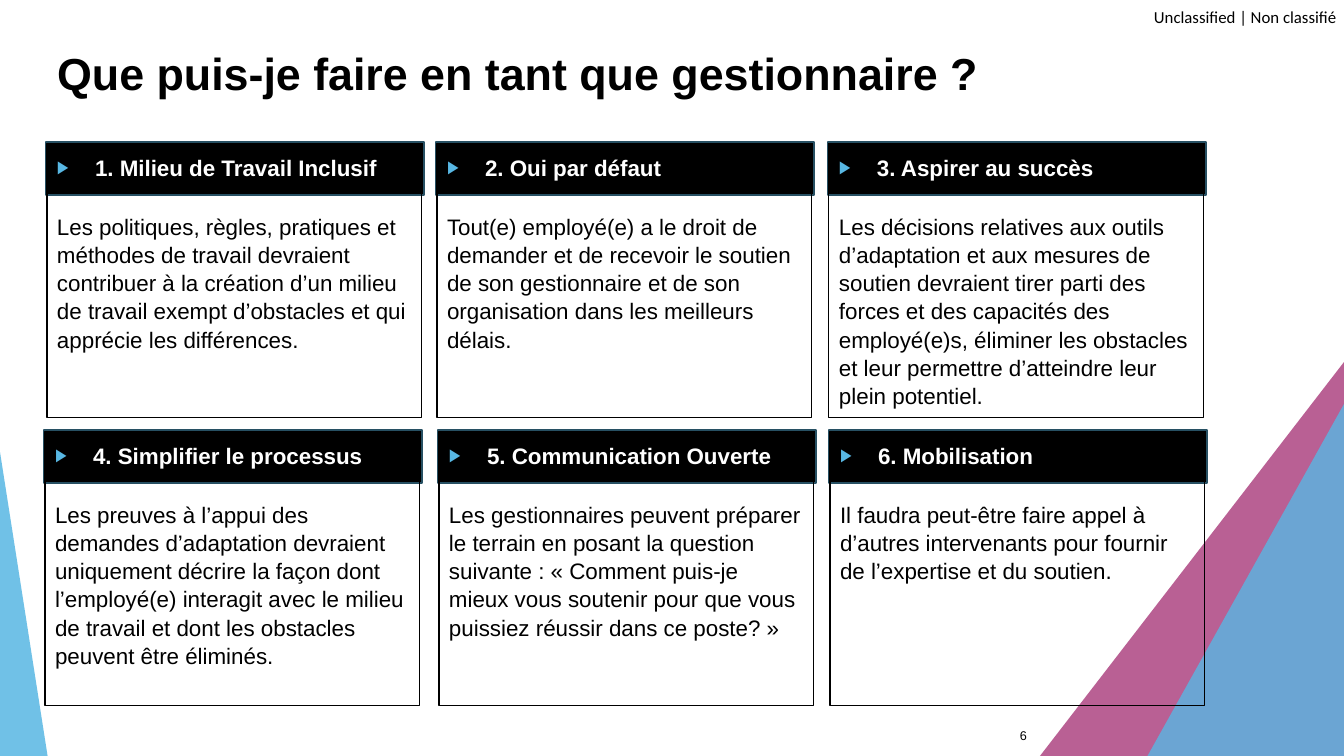
from dataclasses import dataclass

from lxml.etree import SubElement
from pptx import Presentation
from pptx.dml.color import RGBColor
from pptx.enum.shapes import MSO_SHAPE as Shape
from pptx.enum.text import MSO_ANCHOR as Anchor, MSO_AUTO_SIZE as AutoSize, PP_ALIGN as Align
from pptx.oxml.ns import qn
from pptx.util import Pt

TITLE = "Que puis-je faire en tant que gestionnaire ?"
CLASSIFICATION = "Unclassified | Non classifié"
PAGE = "6"

# heading, advice
PRINCIPLES = [
    ("1. Milieu de Travail Inclusif",
     "Les politiques, règles, pratiques et méthodes de travail devraient contribuer à la "
     "création d’un milieu de travail exempt d’obstacles et qui apprécie les différences."),
    ("2. Oui par défaut",
     "Tout(e) employé(e) a le droit de demander et de recevoir le soutien de son "
     "gestionnaire et de son organisation dans les meilleurs délais."),
    ("3. Aspirer au succès",
     "Les décisions relatives aux outils d’adaptation et aux mesures de soutien devraient "
     "tirer parti des forces et des capacités des employé(e)s, éliminer les obstacles et "
     "leur permettre d’atteindre leur plein potentiel."),
    ("4. Simplifier le processus",
     "Les preuves à l’appui des demandes d’adaptation devraient uniquement décrire la façon "
     "dont l’employé(e) interagit avec le milieu de travail et dont les obstacles peuvent "
     "être éliminés."),
    ("5. Communication Ouverte",
     "Les gestionnaires peuvent préparer le terrain en posant la question suivante : "
     "« Comment puis-je mieux vous soutenir pour que vous puissiez réussir dans ce poste? »"),
    ("6. Mobilisation",
     "Il faudra peut-être faire appel à d’autres intervenants pour fournir de l’expertise "
     "et du soutien."),
]


@dataclass(frozen=True)
class Theme:
    ink: str = "000000"
    paper: str = "FFFFFF"
    bar_edge: str = "275063"
    sky: str = "58B7E3"
    berry: str = "9E246B"
    font: str = "Arial"
    label_font: str = "Calibri"
    title: int = 32
    body: int = 16
    label: int = 12
    page: int = 9


THEME = Theme()

# Lengths in px, 1344 across the slide
SLIDE = (1344, 756)
TITLE_BOX = (47, 25, 1163, 96)
LABEL_BOX = (1154, 7, 187, 20)
PAGE_BOX = (962, 716, 75, 40)
CARD_SIZE = (375, 274)
BAR_SIZE = (378, 53)
# card left edges by column, then card top, one entry per row
ROWS = [((47, 437, 829), 144), ((45, 439, 830), 432)]
INSET = 10
BULLET_INDENT = 38

# box, position of the apex, colour, opacity in percent
TRIANGLES = [
    ((1033, 362, 311, 403), 1, THEME.berry, 72),
    ((1143, 404, 201, 360), 1, THEME.sky, 80),
    ((0, 452, 49, 313), 0, THEME.sky, 85),
]


def px(length):
    return round(length * 914400 / 100.8)


def emu(box):
    return [px(length) for length in box]


def rgb(colour):
    return RGBColor.from_string(colour)


def add_run(paragraph, words, size, colour=THEME.ink, bold=False, font=THEME.font):
    run = paragraph.add_run()
    run.text = words
    run.font.size, run.font.bold, run.font.name = Pt(size), bold, font
    run.font.color.rgb = rgb(colour)


def add_panel(slide, kind, box, fill=None, edge=None, edge_width=0.75):
    panel = slide.shapes.add_shape(kind, *emu(box))
    panel.shadow.inherit = False
    if fill:
        panel.fill.solid()
        panel.fill.fore_color.rgb = rgb(fill)
    else:
        panel.fill.background()
    if edge:
        panel.line.color.rgb = rgb(edge)
        panel.line.width = Pt(edge_width)
    else:
        panel.line.fill.background()
    return panel


def add_triangle(slide, box, apex, colour, opacity):
    triangle = add_panel(slide, Shape.ISOSCELES_TRIANGLE, box, fill=colour)
    triangle.adjustments[0] = apex
    swatch = triangle.fill._xPr.find(qn("a:solidFill"))[0]
    SubElement(swatch, qn("a:alpha"), val=str(opacity * 1000))


def add_arrow_bullet(paragraph):
    props = paragraph._p.get_or_add_pPr()
    props.set("marL", str(px(BULLET_INDENT)))
    props.set("indent", str(-px(BULLET_INDENT)))
    colour = SubElement(props, qn("a:buClr"))
    SubElement(colour, qn("a:srgbClr"), val=THEME.sky)
    SubElement(props, qn("a:buSzPct"), val="80000")
    SubElement(props, qn("a:buFont"), typeface=THEME.font)
    SubElement(props, qn("a:buChar"), char="▶")


def add_card(slide, left, top, heading, advice):
    card = add_panel(slide, Shape.RECTANGLE, (left, top, *CARD_SIZE), edge=THEME.ink)
    frame = card.text_frame
    frame.word_wrap = True
    frame.vertical_anchor = Anchor.TOP
    frame.margin_left = frame.margin_right = frame.margin_top = px(INSET)
    frame.margin_bottom = px(INSET / 2)

    head = frame.paragraphs[0]
    head.alignment = Align.LEFT
    head.space_before = head.space_after = Pt(12)
    add_arrow_bullet(head)
    add_run(head, heading, THEME.body, THEME.paper, bold=True)

    body = frame.add_paragraph()
    body.alignment = Align.LEFT
    body.space_before = Pt(10)
    body.line_spacing = 1.05
    add_run(body, advice, THEME.body)


def add_label(slide, box, words, size, font, inset, align):
    label = slide.shapes.add_textbox(*emu(box))
    frame = label.text_frame
    frame.word_wrap = False
    frame.vertical_anchor = Anchor.MIDDLE
    frame.margin_left = frame.margin_right = px(inset)
    frame.margin_top = frame.margin_bottom = 0
    frame.paragraphs[0].alignment = align
    add_run(frame.paragraphs[0], words, size, font=font)


def place_title(slide):
    title = slide.shapes.title
    title.left, title.top, title.width, title.height = emu(TITLE_BOX)
    frame = title.text_frame
    frame.word_wrap = True
    frame.auto_size = AutoSize.NONE
    frame.vertical_anchor = Anchor.MIDDLE
    frame.paragraphs[0].alignment = Align.LEFT
    add_run(frame.paragraphs[0], TITLE, THEME.title, bold=True)


def main():
    deck = Presentation()
    deck.slide_width, deck.slide_height = emu(SLIDE)
    slide = deck.slides.add_slide(deck.slide_layouts[5])
    place_title(slide)

    for triangle in TRIANGLES:
        add_triangle(slide, *triangle)
    add_label(slide, LABEL_BOX, CLASSIFICATION, THEME.label, THEME.label_font, 0, Align.LEFT)

    corners = [(left, top) for lefts, top in ROWS for left in lefts]
    for left, top in corners:
        add_panel(slide, Shape.RECTANGLE, (left - 1, top - 2, *BAR_SIZE),
                  THEME.ink, THEME.bar_edge, 1.5)
    for corner, principle in zip(corners, PRINCIPLES):
        add_card(slide, *corner, *principle)

    add_label(slide, PAGE_BOX, PAGE, THEME.page, THEME.font, INSET, Align.RIGHT)
    deck.save("out.pptx")


if __name__ == "__main__":
    main()
